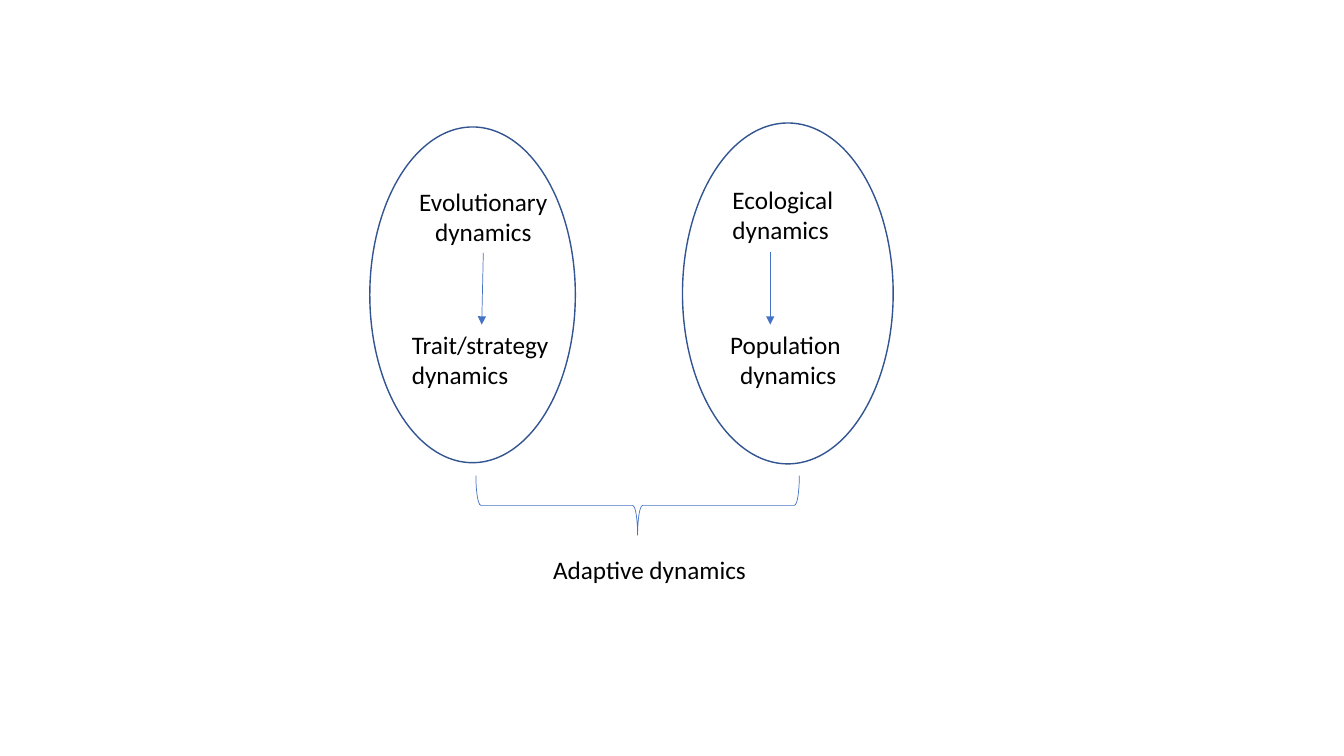
from pptx import Presentation
from pptx.dml.color import RGBColor
from pptx.enum import shapes, text
from pptx.oxml import ns
from pptx.util import Cm, Pt
from lxml import etree

BLACK = RGBColor(0x00, 0x00, 0x00)
NAVY = RGBColor(0x32, 0x54, 0x91)
BLUE = RGBColor(0x44, 0x72, 0xC4)
FONT = "Calibri"
LEFT = text.PP_ALIGN.LEFT
CENTER = text.PP_ALIGN.CENTER

LABELS = {
    "adaptive": ("Adaptive dynamics", LEFT, (13.69, 13.84, 5.94, 1.02)),
    "ecological": ("Ecological dynamics", LEFT, (18.21, 4.52, 4.9, 1.8)),
    "evolutionary": ("Evolutionary dynamics", CENTER, (9.73, 4.57, 4.9, 1.8)),
    "population": ("Population \ndynamics", CENTER, (16.84, 8.18, 6.05, 1.8)),
    "trait": ("Trait/strategy dynamics", LEFT, (10.13, 8.18, 4.42, 1.8)),
}
ELLIPSES = [(17.2, 3.1, 5.31, 8.59), (9.32, 3.2, 5.18, 8.46)]
ARROWS = [("ecological", 19.41, 19.41), ("evolutionary", 12.18, 12.14)]
ARROW_TOP, ARROW_BOTTOM = 6.35, 8.18
BRACE = (15.32, 8.66, 1.5, 8.15)


def add_label(slide, words, align, box):
    sp = slide.shapes.add_textbox(*map(Cm, box))
    tf = sp.text_frame
    tf.word_wrap = True
    tf.auto_size = text.MSO_AUTO_SIZE.SHAPE_TO_FIT_TEXT
    tf.text = words
    for p in tf.paragraphs:
        p.alignment = align
        for r in p.runs:
            r.font.name = FONT
            r.font.size = Pt(18)
            r.font.color.rgb = BLACK
    return sp


def add_outline(slide, kind, box, color, width):
    sp = slide.shapes.add_shape(kind, *map(Cm, box))
    sp.shadow.inherit = False
    sp.fill.background()
    sp.line.color.rgb = color
    sp.line.width = Pt(width)
    return sp


def add_arrow(slide, x1, x2):
    cx = slide.shapes.add_connector(
        shapes.MSO_CONNECTOR.STRAIGHT,
        Cm(x1), Cm(ARROW_TOP), Cm(x2), Cm(ARROW_BOTTOM))
    cx.line.color.rgb = BLUE
    cx.line.width = Pt(0.5)
    etree.SubElement(cx.line._get_or_add_ln(), ns.qn("a:tailEnd"), type="triangle")
    etree.SubElement(cx._element.spPr, ns.qn("a:effectLst"))
    return cx


def main():
    prs = Presentation()
    prs.slide_width, prs.slide_height = Cm(33.87), Cm(19.05)
    slide = prs.slides.add_slide(prs.slide_layouts[6])

    labels = {name: add_label(slide, *spec_row) for name, spec_row in LABELS.items()}
    for box in ELLIPSES:
        add_outline(slide, shapes.MSO_SHAPE.OVAL, box, NAVY, 1)
    for name, x1, x2 in ARROWS:
        cx = add_arrow(slide, x1, x2)
        sp = labels[name]
        if abs(sp.left + sp.width // 2 - Cm(x1)) < Cm(0.05):
            cx.begin_connect(sp, 2)
    brace = add_outline(slide, shapes.MSO_SHAPE.LEFT_BRACE, BRACE, BLUE, 0.5)
    brace.rotation = 270

    prs.save("out.pptx")


if __name__ == "__main__":
    main()
